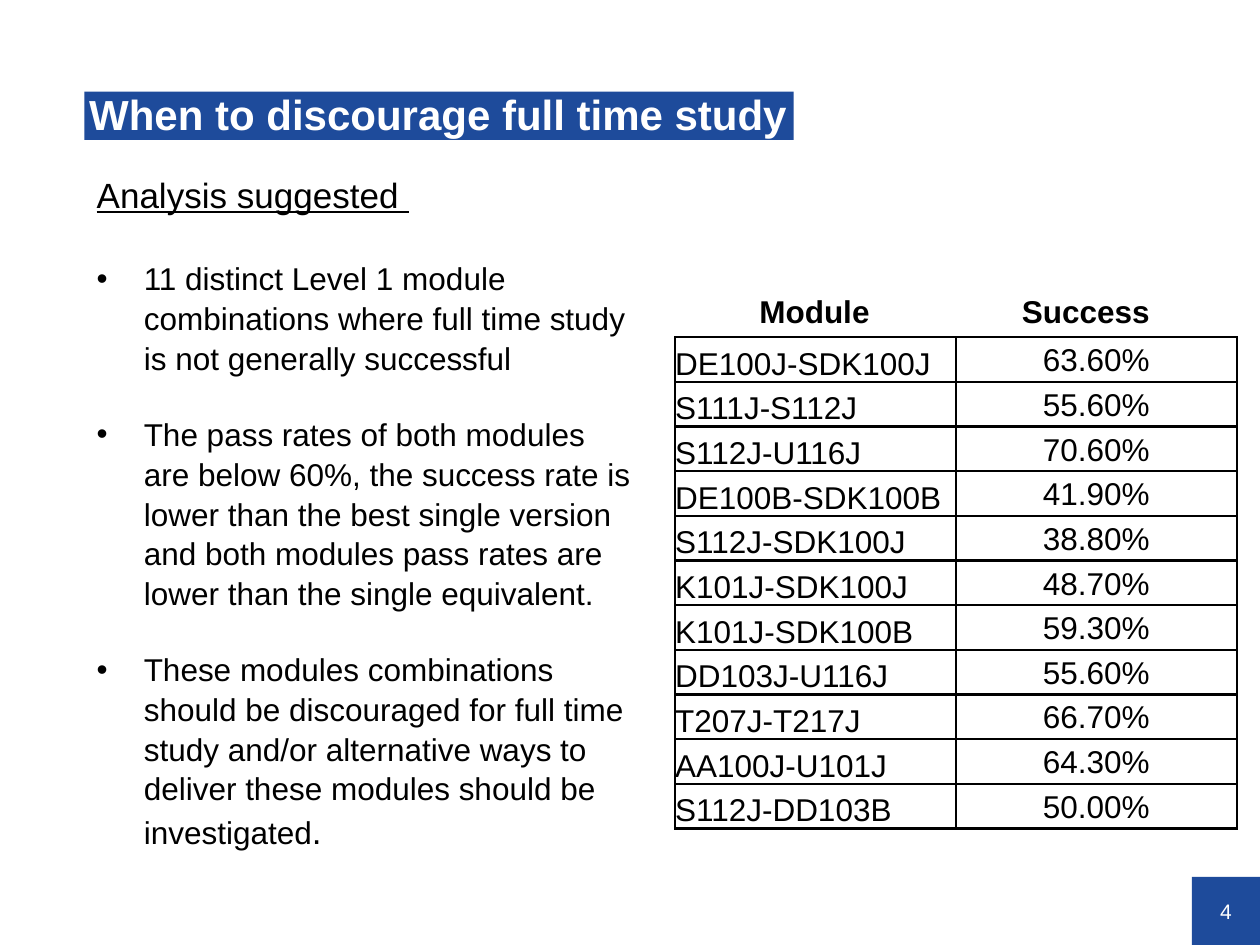
"""Builds the slide on module combinations where full time study is discouraged."""
from lxml.etree import SubElement
from pptx import Presentation
from pptx.dml.color import RGBColor
from pptx.enum.shapes import MSO_SHAPE
from pptx.enum.text import MSO_ANCHOR, PP_ALIGN
from pptx.oxml import parse_xml
from pptx.oxml.ns import nsdecls, qn
from pptx.util import Cm, Pt

BLUE = RGBColor(0x1E, 0x4B, 0x9B)
WHITE = RGBColor(0xFF, 0xFF, 0xFF)
BLACK = RGBColor(0, 0, 0)

TITLE = "When to discourage full time study"
PAGE_NUMBER = "4"
HEADING = "Analysis suggested "
FINDINGS = [
    (24, [("11 distinct Level 1 module combinations where full time study "
           "is not generally successful", 18)]),
    (21, [("The pass rates of both modules are below 60%, the success rate is lower "
           "than the best single version and both modules pass rates are lower than "
           "the single equivalent.", 18)]),
    (21, [("These modules combinations should be discouraged for full time study "
           "and/or alternative ways to deliver these modules should be investigated", 18),
          (".", 20)]),
]
COLUMN_LABELS = [("Module", 15.06, 2.95), ("Success", 20.35, 3.3)]
SUCCESS_RATES = [
    ("DE100J-SDK100J", "63.60%"),
    ("S111J-S112J", "55.60%"),
    ("S112J-U116J", "70.60%"),
    ("DE100B-SDK100B", "41.90%"),
    ("S112J-SDK100J", "38.80%"),
    ("K101J-SDK100J", "48.70%"),
    ("K101J-SDK100B", "59.30%"),
    ("DD103J-U116J", "55.60%"),
    ("T207J-T217J", "66.70%"),
    ("AA100J-U101J", "64.30%"),
    ("S112J-DD103B", "50.00%"),
]
COLUMN_WIDTH, ROW_HEIGHT = 5.66, 0.9
BULLET_INDENT = Cm(0.95)


def add_run(paragraph, text, size, color=BLACK, bold=False, underline=False):
    run = paragraph.add_run()
    run.text = text
    run.font.name = "Arial"
    run.font.size = Pt(size)
    run.font.color.rgb = color
    run.font.bold = bold
    run.font.underline = underline


def set_margins(frame, left=0, top=0):
    frame.margin_left, frame.margin_top = Cm(left), Cm(top)
    frame.margin_right = frame.margin_bottom = 0


def add_banner(slide, left, top, width, height):
    banner = slide.shapes.add_shape(
        MSO_SHAPE.RECTANGLE, Cm(left), Cm(top), Cm(width), Cm(height))
    banner.shadow.inherit = False
    banner.fill.solid()
    banner.fill.fore_color.rgb = BLUE
    banner.line.fill.background()
    frame = banner.text_frame
    frame.vertical_anchor = MSO_ANCHOR.MIDDLE
    return frame


def add_text_frame(slide, left, top, width, height):
    frame = slide.shapes.add_textbox(
        Cm(left), Cm(top), Cm(width), Cm(height)).text_frame
    frame.word_wrap = True
    return frame


def add_bullet(paragraph):
    properties = paragraph._p.get_or_add_pPr()
    properties.set("marL", str(BULLET_INDENT))
    properties.set("indent", str(-BULLET_INDENT))
    SubElement(properties, qn("a:buFont"), typeface="Arial")
    SubElement(properties, qn("a:buChar"), char="•")


def add_borders(cell):
    properties = cell._tc.get_or_add_tcPr()
    for position, side in enumerate("LRTB"):
        properties.insert(position, parse_xml(
            f'<a:ln{side} {nsdecls("a")} w="{Pt(1.5)}"><a:solidFill>'
            f'<a:srgbClr val="{BLACK}"/></a:solidFill></a:ln{side}>'))


def add_title(slide):
    frame = add_banner(slide, 1.7, 1.85, 14.3, 0.97)
    frame.word_wrap = False
    set_margins(frame, 0.1, 0.05)
    paragraph = frame.paragraphs[0]
    paragraph.alignment = PP_ALIGN.LEFT
    paragraph.line_spacing = 0.9
    add_run(paragraph, TITLE, 24, WHITE, bold=True)


def add_page_number(slide):
    frame = add_banner(slide, 24.03, 17.68, 1.37, 1.37)
    set_margins(frame)
    frame.paragraphs[0].alignment = PP_ALIGN.CENTER
    add_run(frame.paragraphs[0], PAGE_NUMBER, 12, WHITE)


def add_findings(slide):
    frame = add_text_frame(slide, 1.7, 3.33, 11.3, 13.59)
    heading = frame.paragraphs[0]
    heading.line_spacing = 1.05
    add_run(heading, HEADING, 20, underline=True)
    for gap, parts in FINDINGS:
        paragraph = frame.add_paragraph()
        add_bullet(paragraph)
        paragraph.line_spacing = 1.05
        paragraph.space_before = Pt(gap)
        for text, size in parts:
            add_run(paragraph, text, size)


def add_success_table(slide):
    for label, left, width in COLUMN_LABELS:
        frame = add_text_frame(slide, left, 5.77, width, 1.02)
        add_run(frame.paragraphs[0], label, 18, bold=True)

    count = len(SUCCESS_RATES)
    table = slide.shapes.add_table(
        count, 2, Cm(13.61), Cm(6.8), Cm(2 * COLUMN_WIDTH), Cm(count * ROW_HEIGHT)).table
    table.first_row = table.horz_banding = False
    for column in table.columns:
        column.width = Cm(COLUMN_WIDTH)
    styles = [(MSO_ANCHOR.BOTTOM, PP_ALIGN.LEFT), (MSO_ANCHOR.MIDDLE, PP_ALIGN.CENTER)]
    for row, values in zip(table.rows, SUCCESS_RATES):
        row.height = Cm(ROW_HEIGHT)
        for cell, value, (anchor, alignment) in zip(row.cells, values, styles):
            set_margins(cell)
            cell.vertical_anchor = anchor
            cell.fill.background()
            add_borders(cell)
            paragraph = cell.text_frame.paragraphs[0]
            paragraph.alignment = alignment
            paragraph.line_spacing = 1.07
            add_run(paragraph, value, 18)


def main():
    presentation = Presentation()
    presentation.slide_width, presentation.slide_height = Cm(25.4), Cm(19.05)
    slide = presentation.slides.add_slide(presentation.slide_layouts[6])
    add_page_number(slide)
    add_title(slide)
    add_findings(slide)
    add_success_table(slide)
    presentation.save("out.pptx")


if __name__ == "__main__":
    main()
